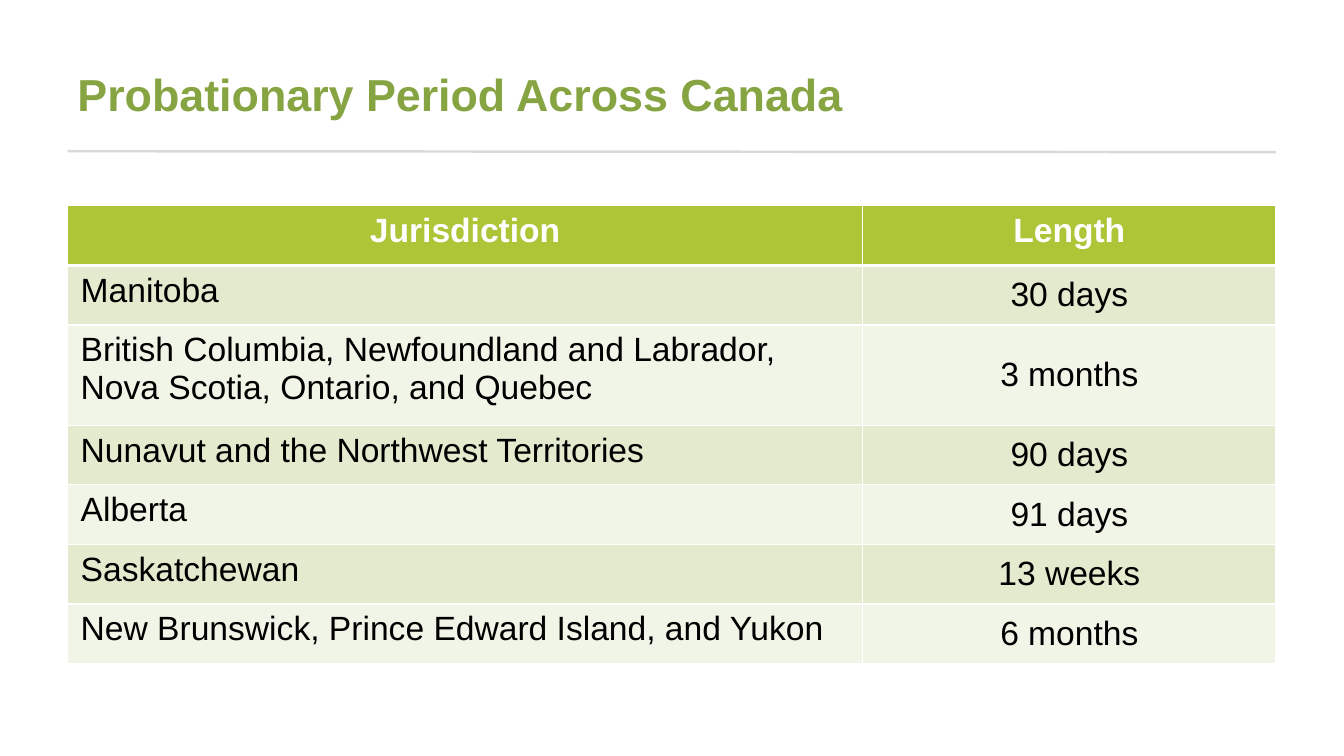
from dataclasses import dataclass

from lxml import etree
from pptx import Presentation
from pptx.dml.color import RGBColor
from pptx.enum import shapes, text
from pptx.oxml import ns
from pptx.util import Pt

COLORS = {
    "title": "87A443",
    "rule": "D9D9D9",
    "header": "ADC536",
    "band_dark": "E3EACE",
    "band_light": "F1F5E8",
    "white": "FFFFFF",
    "black": "000000",
}
FONT = "Arial"
LEFT = 48.24
COLUMN_WIDTHS = (568, 295.2)
ROW_HEIGHT = 42.6


@dataclass(frozen=True)
class Probation:
    jurisdiction: str
    length: str
    height: float = ROW_HEIGHT


PERIODS = (
    Probation("Manitoba", "30 days"),
    Probation(
        "British Columbia, Newfoundland and Labrador, Nova Scotia, Ontario, and Quebec",
        "3 months",
        71.6,
    ),
    Probation("Nunavut and the Northwest Territories", "90 days"),
    Probation("Alberta", "91 days"),
    Probation("Saskatchewan", "13 weeks"),
    Probation("New Brunswick, Prince Edward Island, and Yukon", "6 months"),
)


def rgb(name: str) -> RGBColor:
    return RGBColor.from_string(COLORS[name])


def style_paragraph(paragraph, size: float, color: str, bold: bool, centred: bool) -> None:
    paragraph.alignment = text.PP_ALIGN.CENTER if centred else text.PP_ALIGN.LEFT
    font = paragraph.font
    font.name, font.size, font.bold = FONT, Pt(size), bold
    font.color.rgb = rgb(color)


def set_borders(cell, top: float, bottom: float) -> None:
    """Draw white borders; the sides are 1 pt wide."""
    properties = cell._tc.get_or_add_tcPr()
    widths = {"lnL": 1, "lnR": 1, "lnT": top, "lnB": bottom}
    for position, (tag, width) in enumerate(widths.items()):
        line = etree.Element(ns.qn(f"a:{tag}"), w=str(Pt(width)))
        fill = etree.SubElement(line, ns.qn("a:solidFill"))
        etree.SubElement(fill, ns.qn("a:srgbClr"), val=COLORS["white"])
        properties.insert(position, line)


def add_title(slide, wording: str) -> None:
    title = slide.shapes.add_textbox(Pt(LEFT), Pt(21.6), Pt(864), Pt(90))
    frame = title.text_frame
    frame.word_wrap = True
    frame.vertical_anchor = text.MSO_ANCHOR.MIDDLE
    frame.text = wording
    style_paragraph(frame.paragraphs[0], 32, "title", bold=True, centred=False)


def add_title_rule(slide) -> None:
    rule = slide.shapes.add_connector(
        shapes.MSO_CONNECTOR.STRAIGHT, Pt(LEFT), Pt(108), Pt(911.5), Pt(108.7)
    )
    rule.line.color.rgb = rgb("rule")
    rule.line.width = Pt(1.75)
    etree.SubElement(rule._element.spPr, ns.qn("a:effectLst"))


def add_periods_table(slide) -> None:
    rows = (Probation("Jurisdiction", "Length"), *PERIODS)
    table = slide.shapes.add_table(
        len(rows), len(COLUMN_WIDTHS), Pt(LEFT), Pt(147),
        Pt(sum(COLUMN_WIDTHS)), Pt(sum(row.height for row in rows)),
    ).table
    for column, width in zip(table.columns, COLUMN_WIDTHS):
        column.width = Pt(width)

    for r, row in enumerate(rows):
        table.rows[r].height = Pt(row.height)
        is_header = r == 0
        band = "header" if is_header else "band_dark" if r % 2 else "band_light"
        for c, wording in enumerate((row.jurisdiction, row.length)):
            cell = table.cell(r, c)
            cell.text = wording
            cell.margin_left = cell.margin_right = Pt(9.4)
            cell.margin_top = cell.margin_bottom = Pt(4.7)
            is_length = c == 1
            cell.vertical_anchor = (
                text.MSO_ANCHOR.MIDDLE if is_length and not is_header else text.MSO_ANCHOR.TOP
            )
            cell.fill.solid()
            cell.fill.fore_color.rgb = rgb(band)
            set_borders(cell, top=3 if r == 1 else 1, bottom=3 if is_header else 1)
            style_paragraph(
                cell.text_frame.paragraphs[0], 24, "white" if is_header else "black",
                bold=is_header, centred=is_header or is_length,
            )


def main() -> None:
    deck = Presentation()
    deck.slide_width, deck.slide_height = Pt(960), Pt(540)
    slide = deck.slides.add_slide(deck.slide_layouts[6])
    add_title_rule(slide)
    add_title(slide, "Probationary Period Across Canada")
    add_periods_table(slide)
    deck.save("out.pptx")


if __name__ == "__main__":
    main()
